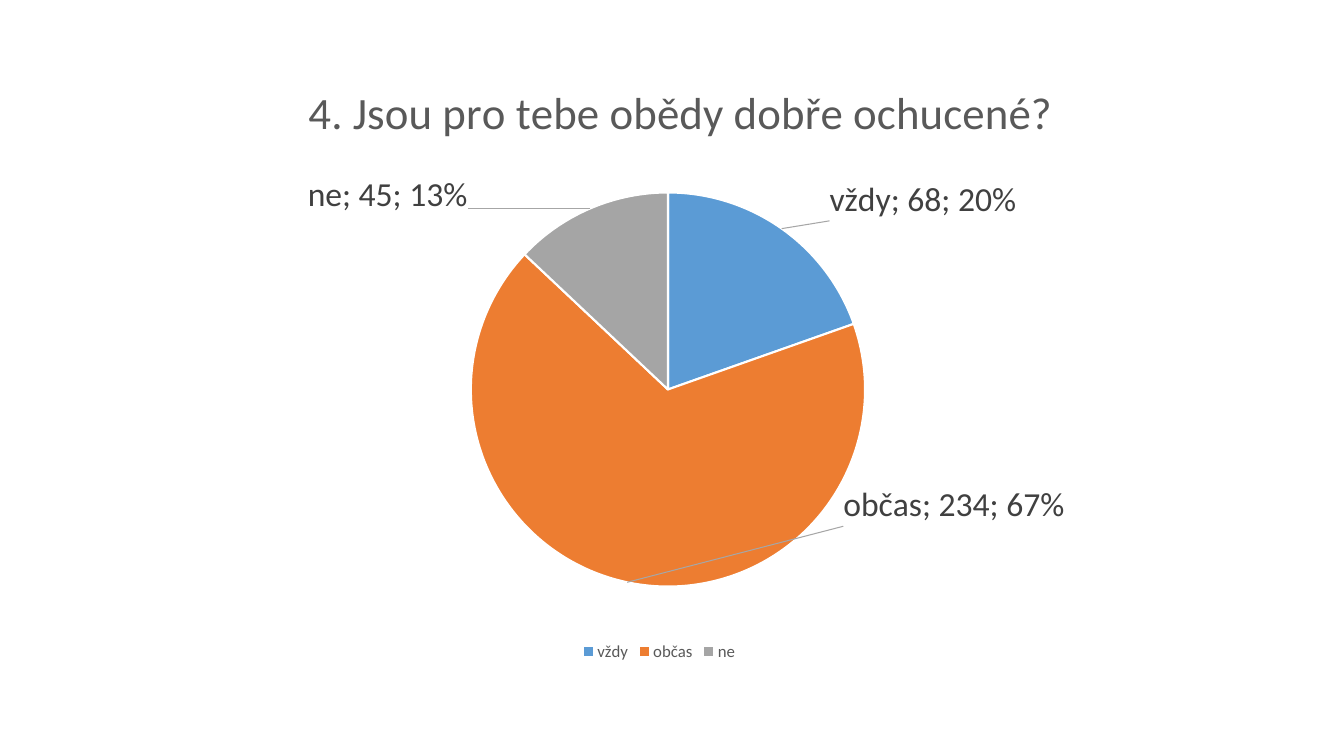
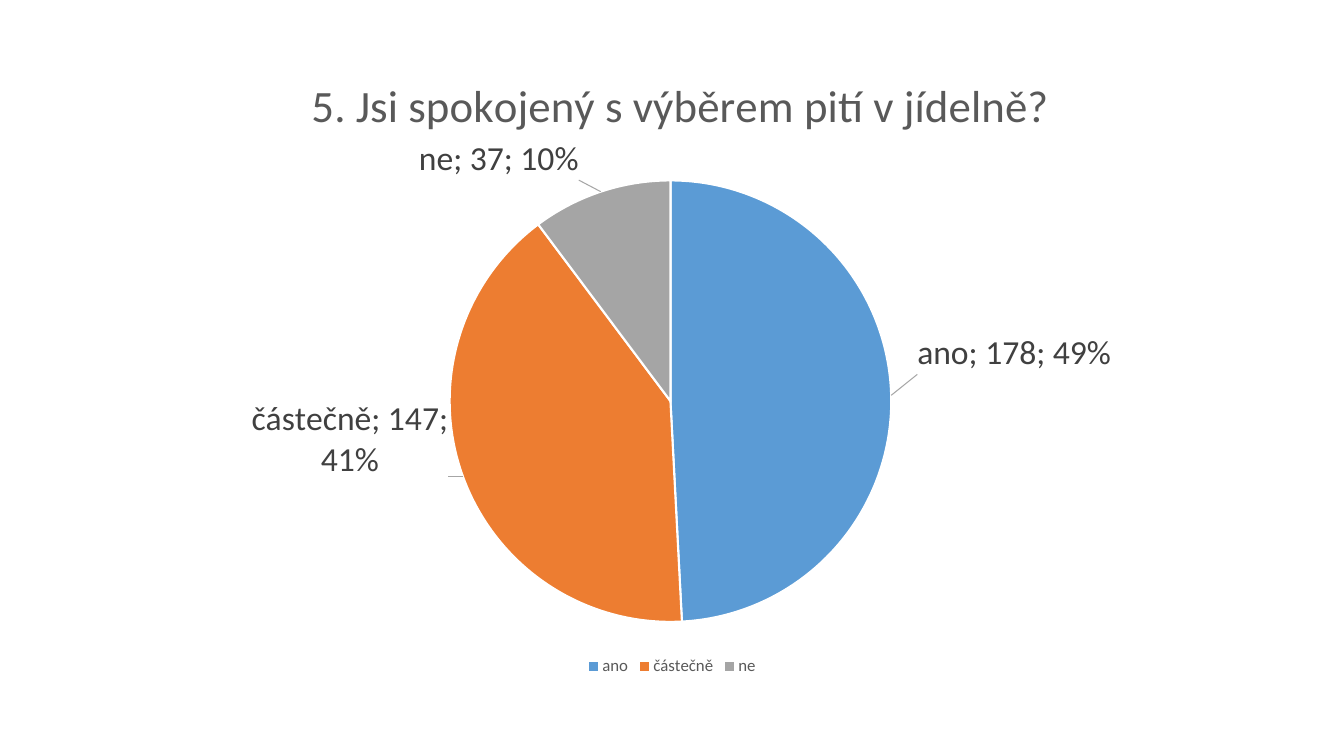
import pptx
import pptx.chart.data
import pptx.dml.color
import pptx.enum.chart
import pptx.oxml
import pptx.oxml.ns
import pptx.util

COLORS = {
    "slices": ["5B9BD5", "ED7D31", "A5A5A5"],
    "border": "FFFFFF",
    "heading": "595959",
    "label": "404040",
    "leader": "A6A6A6",
}
FONT = "Calibri"
LEFT, TOP, WIDTH, HEIGHT = 0.92, 0.4, 11.5, 6.36

QUESTIONS = [
    {
        "title": "4. Jsou pro tebe obědy dobře ochucené?",
        "answers": [("vždy", 68, (0.44, -0.03)),
                    ("občas", 234, (4.35, -1.02)),
                    ("ne", 45, (-1.19, 0.13))],
        "title_at": (2.06, 0.32),
        "pie_at": (3.75, 1.51),
        "diameter": 3.91,
        "legend_at": (4.81, 5.93),
    },
    {
        "title": "5. Jsi spokojený s výběrem pití v jídelně?",
        "answers": [("ano", 178, (0.2, -0.41)),
                    ("částečně", 147, (-0.09, -0.79)),
                    ("ne", 37, (-0.2, -0.06))],
        "title_at": (2.09, 0.25),
        "pie_at": (3.54, 1.39),
        "diameter": 4.38,
        "legend_at": (4.86, 6.1),
    },
]


def rgb(color):
    return pptx.dml.color.RGBColor.from_string(color)


def chart_xml(body):
    names = pptx.oxml.ns.nsdecls("c", "a")
    return pptx.oxml.parse_xml(body.replace(">", f" {names}>", 1))


def style_font(font, size, color):
    font.name, font.size, font.bold = FONT, pptx.util.Pt(size), False
    font.color.rgb = rgb(color)


def write_text(tf, text, size, color):
    r = tf.paragraphs[0].add_run()
    r.text = text
    style_font(r.font, size, color)


def place(element, after, at, size=None, edge=True, inner=False):
    for old in element.findall(pptx.oxml.ns.qn("c:layout")):
        element.remove(old)
    body = '<c:layoutTarget val="inner"/>' if inner else ""
    if edge:
        body += '<c:xMode val="edge"/><c:yMode val="edge"/>'
    shares = {"x": at[0] / WIDTH, "y": at[1] / HEIGHT}
    if size:
        shares.update(w=size / WIDTH, h=size / HEIGHT)
    body += "".join(f'<c:{k} val="{v:.4f}"/>' for k, v in shares.items())
    layout = chart_xml(f"<c:layout><c:manualLayout>{body}</c:manualLayout></c:layout>")
    if after is None:
        element.insert(0, layout)
    else:
        element.find(pptx.oxml.ns.qn(after)).addnext(layout)


def show_parts(element):
    for part in ("showVal", "showCatName", "showPercent"):
        element.find(pptx.oxml.ns.qn(f"c:{part}")).set("val", "1")
    last = element.find(pptx.oxml.ns.qn("c:showBubbleSize"))
    last.addnext(chart_xml("<c:separator>; </c:separator>"))


def format_labels(series, offsets):
    labels = series.data_labels
    style_font(labels.font, 24, COLORS["label"])
    outside = pptx.enum.chart.XL_LABEL_POSITION.OUTSIDE_END
    labels.position = outside
    for i, offset in enumerate(offsets):
        label = series.points[i].data_label
        style_font(label.font, 24, COLORS["label"])
        label.position = outside
    group = series._element.find(pptx.oxml.ns.qn("c:dLbls"))
    for element, offset in zip(group.findall(pptx.oxml.ns.qn("c:dLbl")), offsets):
        place(element, "c:idx", offset, edge=False)
        show_parts(element)
    show_parts(group)
    for old in group.findall(pptx.oxml.ns.qn("c:showLeaderLines")):
        group.remove(old)
    group.append(chart_xml('<c:showLeaderLines val="1"></c:showLeaderLines>'.replace(' val="1"', "")))
    group[-1].set("val", "1")
    group.append(chart_xml(
        '<c:leaderLines><c:spPr><a:ln w="9525"><a:solidFill>'
        f'<a:srgbClr val="{COLORS["leader"]}"/>'
        "</a:solidFill></a:ln></c:spPr></c:leaderLines>"))


def add_pie(slide, question):
    names, values, offsets = zip(*question["answers"])
    data = pptx.chart.data.CategoryChartData()
    data.categories = names
    data.add_series(question["title"], values)
    box = [pptx.util.Inches(v) for v in (LEFT, TOP, WIDTH, HEIGHT)]
    chart = slide.shapes.add_chart(
        pptx.enum.chart.XL_CHART_TYPE.PIE, *box, data).chart
    chart.font.name, chart.font.size = FONT, pptx.util.Pt(10)

    chart.has_title = True
    write_text(chart.chart_title.text_frame, question["title"], 32, COLORS["heading"])
    place(chart.chart_title._element, "c:tx", question["title_at"])

    chart.has_legend = True
    chart.legend.position = pptx.enum.chart.XL_LEGEND_POSITION.BOTTOM
    chart.legend.include_in_layout = False
    style_font(chart.legend.font, 12, COLORS["heading"])
    place(chart.legend._element, "c:legendPos", question["legend_at"])

    plot = chart.plots[0]
    plot.vary_by_categories = True
    series = plot.series[0]
    for i, color in enumerate(COLORS["slices"]):
        fmt = series.points[i].format
        fmt.fill.solid()
        fmt.fill.fore_color.rgb = rgb(color)
        fmt.line.color.rgb = rgb(COLORS["border"])
        fmt.line.width = pptx.util.Pt(1.5)
    format_labels(series, offsets)
    area = chart._chartSpace.find(".//" + pptx.oxml.ns.qn("c:plotArea"))
    place(area, None, question["pie_at"], size=question["diameter"], inner=True)


def main():
    prs = pptx.Presentation()
    prs.slide_width = pptx.util.Inches(13.33)
    prs.slide_height = pptx.util.Inches(7.5)
    for question in QUESTIONS:
        add_pie(prs.slides.add_slide(prs.slide_layouts[6]), question)
    prs.save("out.pptx")


if __name__ == "__main__":
    main()
